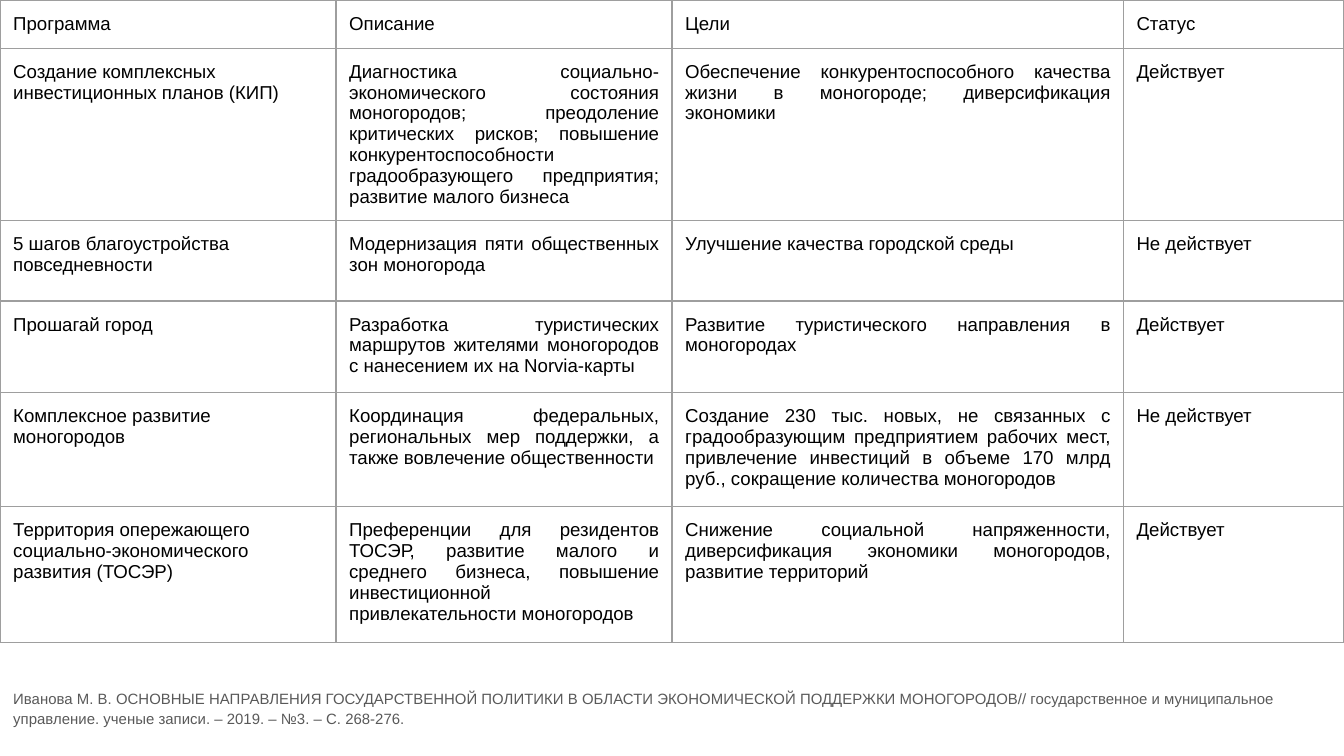
"""Builds a slide with a table of support programmes for single-industry towns."""
from lxml.etree import SubElement
from pptx import Presentation
from pptx.dml.color import RGBColor
from pptx.enum.text import MSO_AUTO_SIZE, PP_ALIGN
from pptx.oxml.ns import qn
from pptx.util import Cm, Pt

COLUMN_WIDTHS = [6.35, 6.35, 8.53, 4.17]
ROW_HEIGHTS = [0.91, 2.36, 1.52, 1.73, 2.16, 2.57]
JUSTIFIED_COLUMNS = (1, 2)
PROGRAMMES = [
    ["Программа", "Описание", "Цели", "Статус"],
    [
        "Создание комплексных инвестиционных планов (КИП)",
        "Диагностика социально-экономического состояния моногородов; преодоление "
        "критических рисков; повышение конкурентоспособности градообразующего "
        "предприятия; развитие малого бизнеса",
        "Обеспечение конкурентоспособного качества жизни в моногороде; "
        "диверсификация экономики",
        "Действует",
    ],
    [
        "5 шагов благоустройства повседневности",
        "Модернизация пяти общественных зон моногорода",
        "Улучшение качества городской среды",
        "Не действует",
    ],
    [
        "Прошагай город",
        "Разработка туристических маршрутов жителями моногородов "
        "с нанесением их на Norvia-карты",
        "Развитие туристического направления в моногородах",
        "Действует",
    ],
    [
        "Комплексное развитие моногородов",
        "Координация федеральных, региональных мер поддержки, "
        "а также вовлечение общественности ",
        "Создание 230 тыс. новых, не связанных с градообразующим предприятием "
        "рабочих мест, привлечение инвестиций в объеме 170 млрд руб., "
        "сокращение количества моногородов",
        "Не действует",
    ],
    [
        "Территория опережающего социально-экономического развития (ТОСЭР)",
        "Преференции для резидентов ТОСЭР, развитие малого и среднего бизнеса, "
        "повышение инвестиционной привлекательности моногородов",
        "Снижение социальной напряженности, диверсификация экономики "
        "моногородов, развитие территорий",
        "Действует",
    ],
]
CITATION = (
    "Иванова М. В. ОСНОВНЫЕ НАПРАВЛЕНИЯ ГОСУДАРСТВЕННОЙ ПОЛИТИКИ В ОБЛАСТИ "
    "ЭКОНОМИЧЕСКОЙ ПОДДЕРЖКИ МОНОГОРОДОВ// государственное и муниципальное "
    "управление. ученые записи. – 2019. – №3. – С. 268-276."
)


def color(value):
    return RGBColor.from_string(value)


class SlideWriter:
    font = "Arial"
    ink = "000000"
    muted = "595959"
    rule = "9E9E9E"
    rule_width = Pt(0.75)
    inset = Cm(0.25)

    def __init__(self, slide):
        self.slide = slide

    def set_insets(self, holder):
        for side in ("left", "right", "top", "bottom"):
            setattr(holder, f"margin_{side}", self.inset)

    def run(self, paragraph, wording, size, ink):
        run = paragraph.add_run()
        run.text = wording
        run.font.name = self.font
        run.font.size = Pt(size)
        run.font.color.rgb = color(ink)

    def borders(self, cell):
        properties = cell._tc.get_or_add_tcPr()
        for position, edge in enumerate(("a:lnL", "a:lnR", "a:lnT", "a:lnB")):
            line = SubElement(properties, qn(edge), w=str(self.rule_width))
            fill = SubElement(line, qn("a:solidFill"))
            SubElement(fill, qn("a:srgbClr"), val=self.rule)
            properties.insert(position, line)

    def cell(self, cell, wording, justified):
        self.set_insets(cell)
        cell.fill.background()
        self.borders(cell)
        paragraph = cell.text_frame.paragraphs[0]
        paragraph.alignment = PP_ALIGN.JUSTIFY if justified else PP_ALIGN.LEFT
        self.run(paragraph, wording, 10, self.ink)

    def table(self, rows, widths, heights):
        table = self.slide.shapes.add_table(
            len(rows), len(widths), 0, 0, Cm(sum(widths)), Cm(sum(heights))
        ).table
        table.first_row = False
        table.horz_banding = False
        for column, width in zip(table.columns, widths):
            column.width = Cm(width)
        for row, height in zip(table.rows, heights):
            row.height = Cm(height)
        for r, row in enumerate(rows):
            for c, wording in enumerate(row):
                self.cell(table.cell(r, c), wording, r > 0 and c in JUSTIFIED_COLUMNS)

    def citation(self, wording, left, top, width, height):
        frame = self.slide.shapes.add_textbox(
            Cm(left), Cm(top), Cm(width), Cm(height)
        ).text_frame
        frame.word_wrap = True
        frame.auto_size = MSO_AUTO_SIZE.SHAPE_TO_FIT_TEXT
        self.set_insets(frame)
        paragraph = frame.paragraphs[0]
        paragraph.line_spacing = 1.15
        paragraph.space_before = paragraph.space_after = Pt(12)
        self.run(paragraph, wording, 8, self.muted)


def main():
    presentation = Presentation()
    presentation.slide_width = Cm(25.4)
    presentation.slide_height = Cm(14.29)
    blank = presentation.slide_layouts[6]
    writer = SlideWriter(presentation.slides.add_slide(blank))
    writer.table(PROGRAMMES, COLUMN_WIDTHS, ROW_HEIGHTS)
    writer.citation(CITATION, 0, 12.73, 25.4, 1.24)
    presentation.save("out.pptx")


if __name__ == "__main__":
    main()
